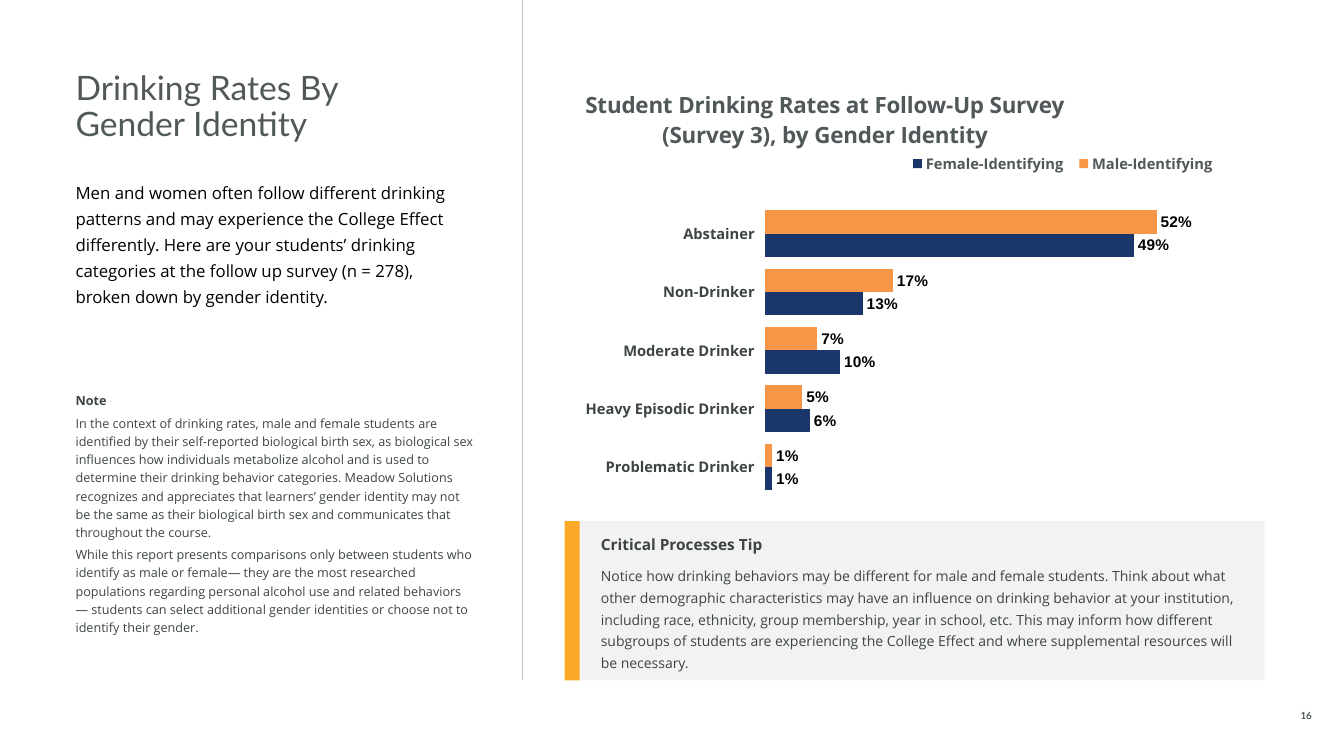
from lxml.etree import SubElement
from pptx import Presentation
from pptx.chart.data import CategoryChartData
from pptx.dml.color import RGBColor
from pptx.enum.chart import XL_CHART_TYPE as ChartType
from pptx.enum.chart import XL_LABEL_POSITION as LabelPosition
from pptx.enum.chart import XL_LEGEND_POSITION as LegendPosition
from pptx.enum.chart import XL_TICK_MARK as TickMark
from pptx.enum.shapes import MSO_CONNECTOR as Connector
from pptx.enum.shapes import MSO_SHAPE as Shape
from pptx.enum.text import MSO_ANCHOR as Anchor
from pptx.enum.text import PP_ALIGN as Align
from pptx.oxml import parse_xml
from pptx.oxml.ns import nsdecls, qn
from pptx.util import Inches, Pt

COLORS = {"slate": "515859", "ink": "3D4543", "black": "000000", "rule": "C1C1C0",
          "panel": "F2F2F2", "accent": "F9A926", "male": "F79646", "female": "1B366A"}

TITLE = "Drinking Rates By\vGender Identity"
INTRO = ("Men and women often follow different drinking patterns and may experience the College "
         "Effect differently. Here are your students’ drinking categories at the follow up survey "
         "(n = 278), broken down by gender identity.")
NOTE = [
    "Note",
    "In the context of drinking rates, male and female students are identified by their "
    "self-reported biological birth sex, as biological sex influences how individuals metabolize "
    "alcohol and is used to determine their drinking behavior categories. Meadow Solutions "
    "recognizes and appreciates that learners’ gender identity may not be the same as their "
    "biological birth sex and communicates that throughout the course.",
    "While this report presents comparisons only between students who identify as male or "
    "female— they are the most researched populations regarding personal alcohol use and related "
    "behaviors — students can select additional gender identities or choose not to identify "
    "their gender.",
]
TIP = [
    "Critical Processes Tip",
    "Notice how drinking behaviors may be different for male and female students. Think about "
    "what other demographic characteristics may have an influence on drinking behavior at your "
    "institution, including race, ethnicity, group membership, year in school, etc. This may "
    "inform how different subgroups of students are experiencing the College Effect and where "
    "supplemental resources will be necessary.",
]
PAGE_NUMBER = "16"

CHART_TITLE = "Student Drinking Rates at Follow-Up Survey (Survey 3), by Gender Identity"
CATEGORIES = ["Abstainer", "Non-Drinker", "Moderate Drinker", "Heavy Episodic Drinker",
              "Problematic Drinker"]
SERIES = [("Male-Identifying", [0.52, 0.17, 0.07, 0.05, 0.01], "male"),
          ("Female-Identifying", [0.49, 0.13, 0.10, 0.06, 0.01], "female")]

LEFT, COLUMN = 0.75, 3.94
TIP_TOP, TIP_HEIGHT = 5.17, 1.58


def rgb(name):
    return RGBColor.from_string(COLORS[name])


def style(font, size, color, name="Open Sans", bold=False):
    font.size, font.name, font.bold = Pt(size), name, bold
    font.color.rgb = rgb(color)


def write(shape, texts, size, color, spacing=1.0, name="Open Sans", before=0,
          bold_first=False, anchor=Anchor.TOP, align=Align.LEFT, inset=0):
    frame = shape.text_frame
    frame.word_wrap, frame.vertical_anchor = True, anchor
    frame.margin_left = frame.margin_right = Inches(inset)
    frame.margin_top = frame.margin_bottom = 0
    for index, text in enumerate(texts):
        para = frame.add_paragraph() if index else frame.paragraphs[0]
        para.text, para.alignment, para.line_spacing = text, align, spacing
        if index:
            para.space_before = Pt(before)
        style(para.font, size, color, name, bold_first and index == 0)


def add_text(page, place, texts, size, color, **options):
    box = page.shapes.add_textbox(*map(Inches, place))
    write(box, texts, size, color, **options)


def add_block(page, place, color):
    block = page.shapes.add_shape(Shape.RECTANGLE, *map(Inches, place))
    block.shadow.inherit = False
    block.fill.solid()
    block.fill.fore_color.rgb = rgb(color)
    block.line.fill.background()
    return block


def set_layout(element, after, x, y, width=None, height=None, inner=False):
    """Fix a chart part's place, as fractions of the chart; `after` is the preceding tag."""
    for old in element.findall(qn("c:layout")):
        element.remove(old)
    settings = [("layoutTarget", "inner")] if inner else []
    settings += [("xMode", "edge"), ("yMode", "edge"), ("x", x), ("y", y)]
    if width:
        settings += [("w", width), ("h", height)]
    layout = parse_xml(f"<c:layout {nsdecls('c')}><c:manualLayout/></c:layout>")
    for tag, value in settings:
        SubElement(layout[0], qn("c:" + tag)).set("val", str(value))
    if after:
        element.find(qn(after)).addnext(layout)
    else:
        element.insert(0, layout)


def add_rates_chart(page):
    data = CategoryChartData(number_format="0%")
    data.categories = CATEGORIES
    for name, values, _ in SERIES:
        data.add_series(name, values)
    place = map(Inches, (5.7, 0.75, 6.5, 4.26))
    chart = page.shapes.add_chart(ChartType.BAR_CLUSTERED, *place, data).chart
    style(chart.font, 10, "slate", "Arial")

    chart.has_title = True
    heading = chart.chart_title.text_frame.paragraphs[0]
    heading.text = CHART_TITLE
    style(heading.font, 16, "slate", bold=True)
    chart.chart_title.include_in_layout = False
    set_layout(chart.chart_title._element, "c:tx", 0.01, 0.02)

    chart.has_legend = True
    chart.legend.position = LegendPosition.TOP
    chart.legend.include_in_layout = False
    style(chart.legend.font, 10.5, "slate", bold=True)
    set_layout(chart.legend._element, "c:legendPos", 0.5, 0.17, 0.49, 0.07)

    categories, values = chart.category_axis, chart.value_axis
    categories.reverse_order = True
    categories.major_tick_mark = TickMark.OUTSIDE
    categories.format.line.fill.background()
    style(categories.tick_labels.font, 10.5, "ink", bold=True)
    values.minimum_scale, values.maximum_scale = 0, 0.6
    values.has_major_gridlines = False
    values.visible = False

    plot = chart.plots[0]
    plot.gap_width, plot.overlap, plot.vary_by_categories = 50, 0, False
    set_layout(plot._element.getparent(), None, 0.29, 0.3, 0.69, 0.68, inner=True)
    for series, (_, _, color) in zip(plot.series, SERIES):
        series.format.fill.solid()
        series.format.fill.fore_color.rgb = rgb(color)
        labels = series.data_labels
        labels.show_value, labels.position = True, LabelPosition.OUTSIDE_END
        labels.number_format, labels.number_format_is_linked = "0%", False
        style(labels.font, 11, "black", "Arial", True)


def main():
    deck = Presentation()
    deck.slide_width, deck.slide_height = Inches(13.33), Inches(7.5)
    page = deck.slides.add_slide(deck.slide_layouts[6])

    divider = page.shapes.add_connector(
        Connector.STRAIGHT, *map(Inches, (5.18, 0, 5.18, TIP_TOP + TIP_HEIGHT)))
    divider.line.color.rgb, divider.line.width = rgb("rule"), Pt(1)
    SubElement(divider._element.spPr, qn("a:effectLst"))

    tip = add_block(page, (5.71, TIP_TOP, 6.83, TIP_HEIGHT), "panel")
    write(tip, TIP, 10, "ink", spacing=1.3, before=6, bold_first=True,
          anchor=Anchor.MIDDLE, inset=0.25)
    tip.text_frame.paragraphs[0].font.size = Pt(11)
    add_block(page, (5.6, TIP_TOP, 0.15, TIP_HEIGHT), "accent")

    add_text(page, (LEFT, 1.75, COLUMN, 1.84), [INTRO], 12, "black", spacing=1.3)
    add_text(page, (12.7, 7.01, 0.51, 0.15), [PAGE_NUMBER], 7, "slate", name="Lato",
             bold_first=True, anchor=Anchor.BOTTOM, align=Align.CENTER)
    add_text(page, (LEFT, 0.71, COLUMN, 0.7), [TITLE], 24, "slate", name="Lato", spacing=0.9)
    add_text(page, (LEFT, 3.59, COLUMN, 2.71), NOTE, 9, "ink", spacing=1.2, before=3,
             bold_first=True, anchor=Anchor.BOTTOM)
    add_rates_chart(page)
    deck.save("out.pptx")


if __name__ == "__main__":
    main()
